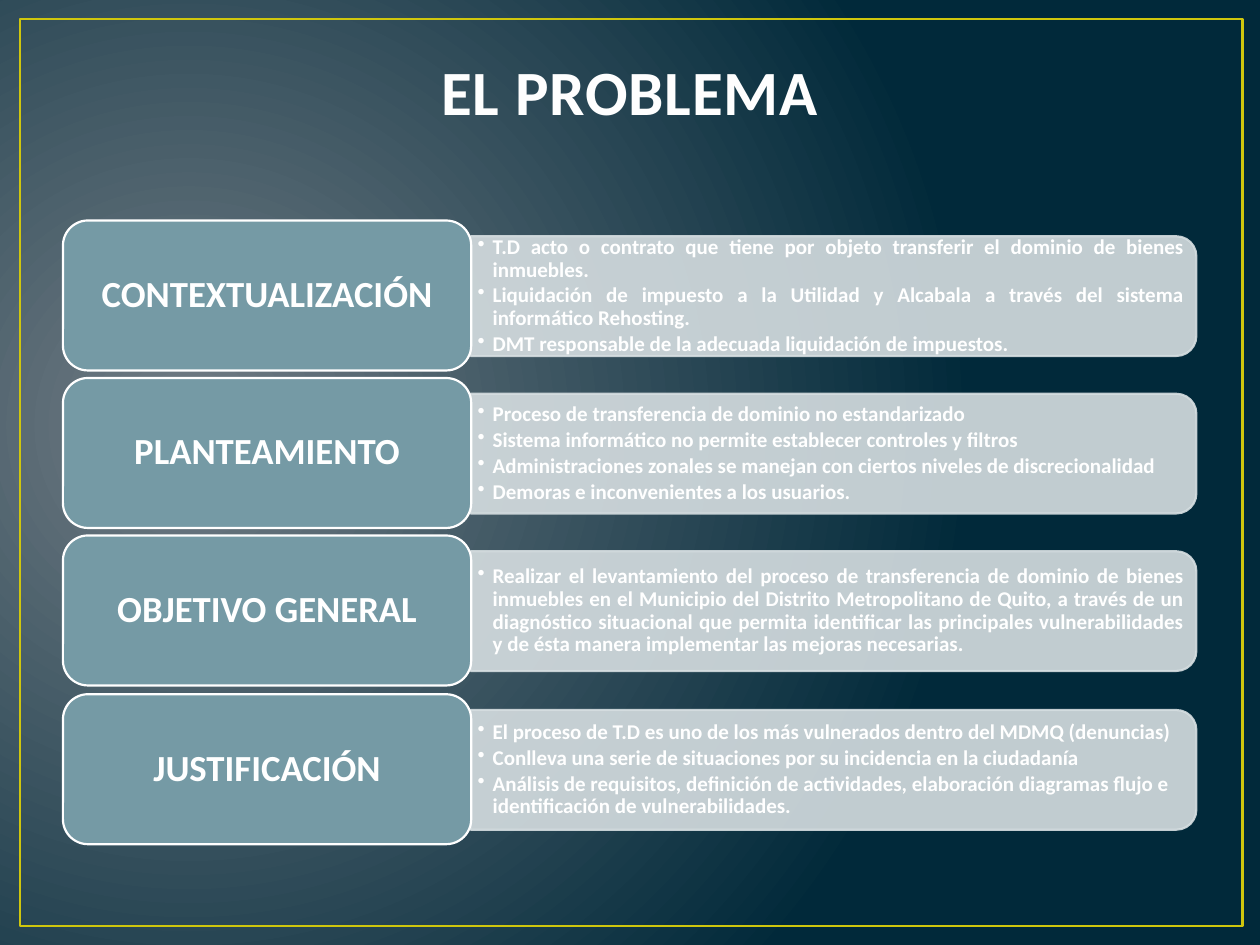
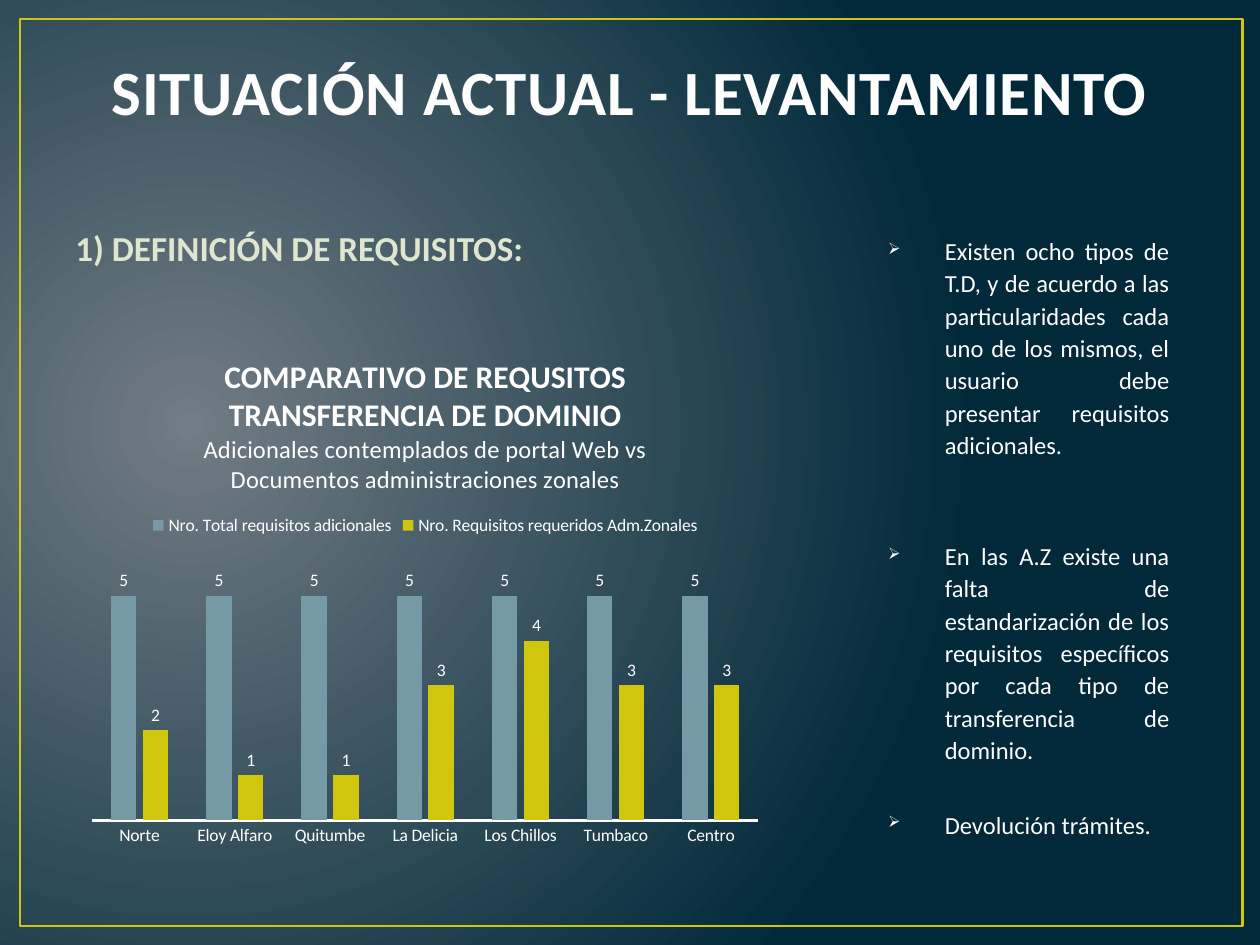
"""Build two thesis slides: the problem statement and the requirements survey."""
from lxml import etree
from pptx import Presentation
from pptx import util as u
from pptx.chart.data import CategoryChartData
from pptx.dml.color import RGBColor
from pptx.enum import chart as charts, shapes, text
from pptx.oxml.ns import qn

PX = 9144
FONT = "Calibri"
GLOW = RGBColor(0x71, 0x7C, 0x84)
NIGHT = RGBColor(0x01, 0x29, 0x3A)
YELLOW = RGBColor(0xCF, 0xC6, 0x0D)
TEAL = RGBColor(0x75, 0x9A, 0xA5)
MIST = RGBColor(0xD6, 0xDE, 0xE1)
CREAM = RGBColor(0xDF, 0xE6, 0xD0)
TITLE_WHITE = RGBColor(0xFE, 0xFE, 0xFE)
WHITE = RGBColor(0xFF, 0xFF, 0xFF)
LEFT, CENTER, JUSTIFY = text.PP_ALIGN.LEFT, text.PP_ALIGN.CENTER, text.PP_ALIGN.JUSTIFY
MIDDLE = text.MSO_ANCHOR.MIDDLE


def area(*sides):
    return [side * PX for side in sides]


def write(frame, lines, size, color=WHITE, bold=True, align=LEFT, spacing=1.0, bullet=None):
    frame.word_wrap = True
    for number, line in enumerate(lines):
        para = frame.paragraphs[0] if number == 0 else frame.add_paragraph()
        para.text = line
        para.alignment = align
        para.line_spacing = spacing
        if bullet:
            mark, percent, margin, hang = bullet
            props = para._p.get_or_add_pPr()
            props.set("marL", str(margin * PX))
            props.set("indent", str(-hang * PX))
            etree.SubElement(props, qn("a:buSzPct"), val=str(percent * 1000))
            etree.SubElement(props, qn("a:buChar"), char=mark)
        para.font.name = FONT
        para.font.size = u.Pt(size)
        para.font.bold = bold
        para.font.color.rgb = color


sections = [
    ("CONTEXTUALIZACIÓN", JUSTIFY, [
        "T.D acto o contrato que tiene por objeto transferir el dominio de bienes inmuebles.",
        "Liquidación de impuesto a la Utilidad y Alcabala a través del sistema "
        "informático Rehosting.",
        "DMT responsable de la adecuada liquidación de impuestos."]),
    ("PLANTEAMIENTO", JUSTIFY, [
        "Proceso de transferencia de dominio no estandarizado",
        "Sistema informático no permite establecer controles y filtros",
        "Administraciones zonales se manejan con ciertos niveles de discrecionalidad",
        "Demoras e inconvenientes a los usuarios."]),
    ("OBJETIVO GENERAL", JUSTIFY, [
        "Realizar el levantamiento del proceso de transferencia de dominio de bienes "
        "inmuebles en el Municipio del Distrito Metropolitano de Quito, a través de un "
        "diagnóstico situacional que permita identificar las principales vulnerabilidades "
        "y de ésta manera implementar las mejoras necesarias."]),
    ("JUSTIFICACIÓN", LEFT, [
        "El proceso de T.D es uno de los más vulnerados dentro del MDMQ (denuncias)",
        "Conlleva una serie de situaciones por su incidencia en la ciudadanía",
        "Análisis de requisitos, definición de actividades, elaboración diagramas flujo e "
        "identificación de vulnerabilidades."]),
]
findings = [
    "Existen ocho tipos de T.D, y de acuerdo a las particularidades cada uno de los "
    "mismos, el usuario debe presentar requisitos adicionales.",
    "En las A.Z existe una falta de estandarización de los requisitos específicos por "
    "cada tipo de transferencia de dominio.",
    "Devolución trámites.",
]
zones = ["Norte", "Eloy Alfaro", "Quitumbe", "La Delicia", "Los Chillos", "Tumbaco", "Centro"]
requirements = [
    ("Nro. Total requisitos adicionales", TEAL, [5] * 7),
    ("Nro. Requisitos requeridos Adm.Zonales", YELLOW, [2, 1, 1, 3, 4, 3, 3]),
]

deck = Presentation()
deck.slide_width, deck.slide_height = area(1000, 750)

for title in ("EL PROBLEMA", "SITUACIÓN ACTUAL - LEVANTAMIENTO"):
    page = deck.slides.add_slide(deck.slide_layouts[6])
    backdrop = page.background.fill
    backdrop.gradient()
    for stop, color in zip(backdrop.gradient_stops, (GLOW, NIGHT)):
        stop.color.rgb = color
    gradient = page._element.find(".//" + qn("a:gradFill"))
    gradient.remove(gradient.find(qn("a:lin")))
    circle = etree.SubElement(gradient, qn("a:path"), {"path": "circle"})
    etree.SubElement(circle, qn("a:fillToRect"), l="15000", t="50000", r="85000", b="60000")

    border = page.shapes.add_shape(shapes.MSO_SHAPE.RECTANGLE, *area(16, 15, 970, 720))
    border.shadow.inherit = False
    border.fill.background()
    border.line.color.rgb = YELLOW
    border.line.width = u.Pt(1.5)

    heading = page.shapes.add_textbox(*area(50, 30, 900, 77)).text_frame
    heading.vertical_anchor = text.MSO_ANCHOR.BOTTOM
    write(heading, [title], 36, TITLE_WHITE, align=CENTER)
    heading.paragraphs[0].font._rPr.set("spc", "50")

problem, survey = deck.slides

for row, (name, align, points) in enumerate(sections):
    top = 175 + row * 376 // 3
    bar = problem.shapes.add_shape(
        shapes.MSO_SHAPE.ROUND_2_SAME_RECTANGLE, *area(614, top - 228, 95, 576))
    bar.rotation = 90
    label = problem.shapes.add_shape(
        shapes.MSO_SHAPE.ROUNDED_RECTANGLE, *area(50, top, 324, 119))
    for shape, fill, line in ((bar, MIST, MIST), (label, TEAL, WHITE)):
        shape.shadow.inherit = False
        shape.fill.solid()
        shape.fill.fore_color.rgb = fill
        shape.line.color.rgb = line
        shape.line.width = u.Pt(1.25)
    for color in bar._element.spPr.iter(qn("a:srgbClr")):
        etree.SubElement(color, qn("a:alpha"), val="90000")

    label.text_frame.vertical_anchor = MIDDLE
    write(label.text_frame, [name], 21, align=CENTER, spacing=0.9)

    detail = problem.shapes.add_textbox(*area(374, top + 17, 571, 86)).text_frame
    detail.vertical_anchor = MIDDLE
    detail.margin_left, detail.margin_right = area(5, 5)
    detail.margin_top, detail.margin_bottom = area(3, 3)
    write(detail, points, 12, align=align, spacing=0.9, bullet=("•", 100, 12, 12))
    for para in detail.paragraphs:
        para.space_after = u.Pt(1.8)

subtitle = survey.shapes.add_textbox(*area(50, 175, 900, 495)).text_frame
write(subtitle, ["1) DEFINICIÓN DE REQUISITOS:"], 20, CREAM)

data = CategoryChartData()
data.categories = zones
for name, color, values in requirements:
    data.add_series(name, values)
chart = survey.shapes.add_chart(
    charts.XL_CHART_TYPE.COLUMN_CLUSTERED, *area(62, 266, 551, 413), data).chart
chart.font.name = FONT
chart.font.size = u.Pt(10)
chart.font.color.rgb = WHITE

caption = chart.chart_title.text_frame
write(caption, [
    "COMPARATIVO DE REQUSITOS TRANSFERENCIA DE DOMINIO",
    "Adicionales contemplados de portal Web vs Documentos administraciones zonales",
], 18, align=CENTER)
caption.paragraphs[1].font.size = u.Pt(14)
caption.paragraphs[1].font.bold = False

chart.has_legend = True
chart.legend.position = charts.XL_LEGEND_POSITION.TOP
chart.legend.include_in_layout = False
chart.value_axis.visible = False
chart.value_axis.has_major_gridlines = False
chart.value_axis.minimum_scale = 0
chart.value_axis.maximum_scale = 6
chart.category_axis.major_tick_mark = charts.XL_TICK_MARK.NONE
chart.category_axis.format.line.color.rgb = WHITE
chart.category_axis.format.line.width = u.Pt(1.5)

plot = chart.plots[0]
plot.gap_width = 150
plot.overlap = -25
plot.vary_by_categories = False
plot.has_data_labels = True
plot.data_labels.show_value = True
plot.data_labels.position = charts.XL_LABEL_POSITION.OUTSIDE_END
for series, (name, color, values) in zip(plot.series, requirements):
    series.format.fill.solid()
    series.format.fill.fore_color.rgb = color

notes = survey.shapes.add_textbox(*area(680, 180, 258, 531)).text_frame
write(notes, findings, 14, bold=False, align=JUSTIFY, spacing=1.1, bullet=("➢", 65, 60, 45))
for para, gap in zip(notes.paragraphs, (0, 45, 24)):
    para.space_before = u.Pt(gap)

deck.save("out.pptx")
